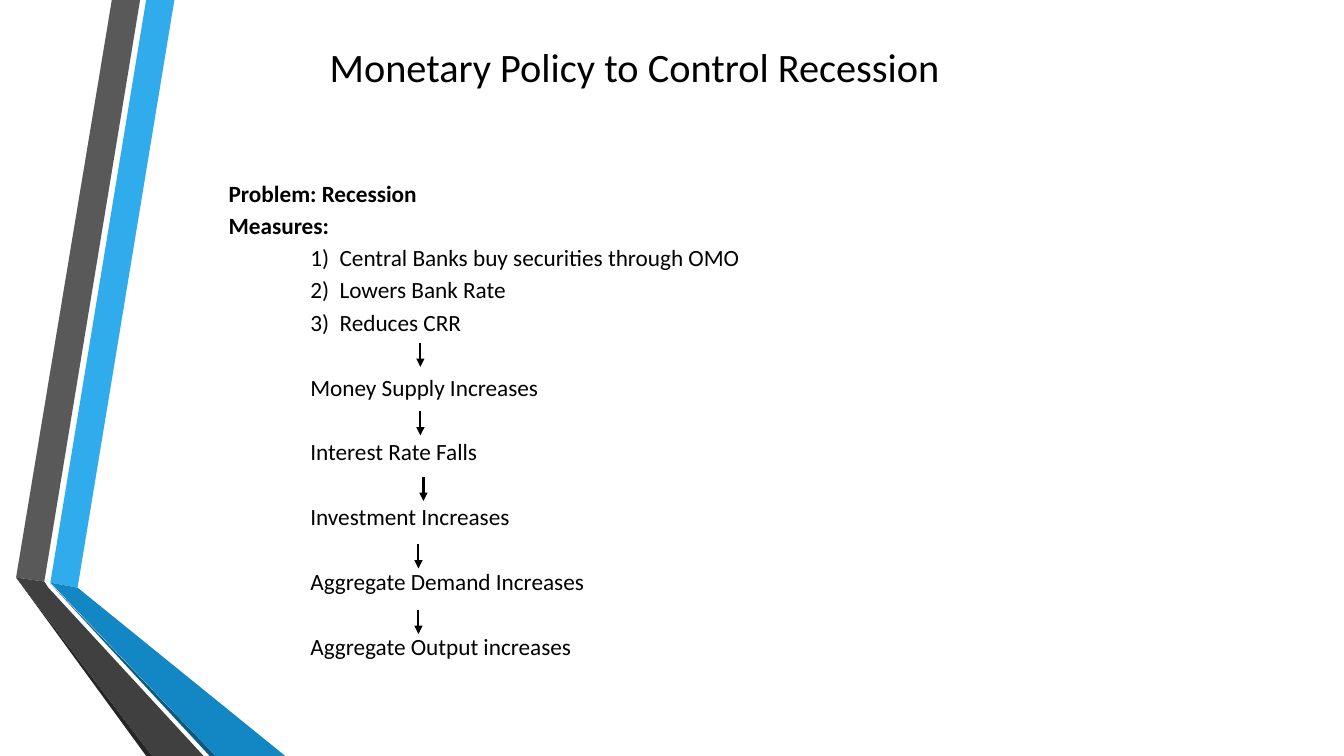
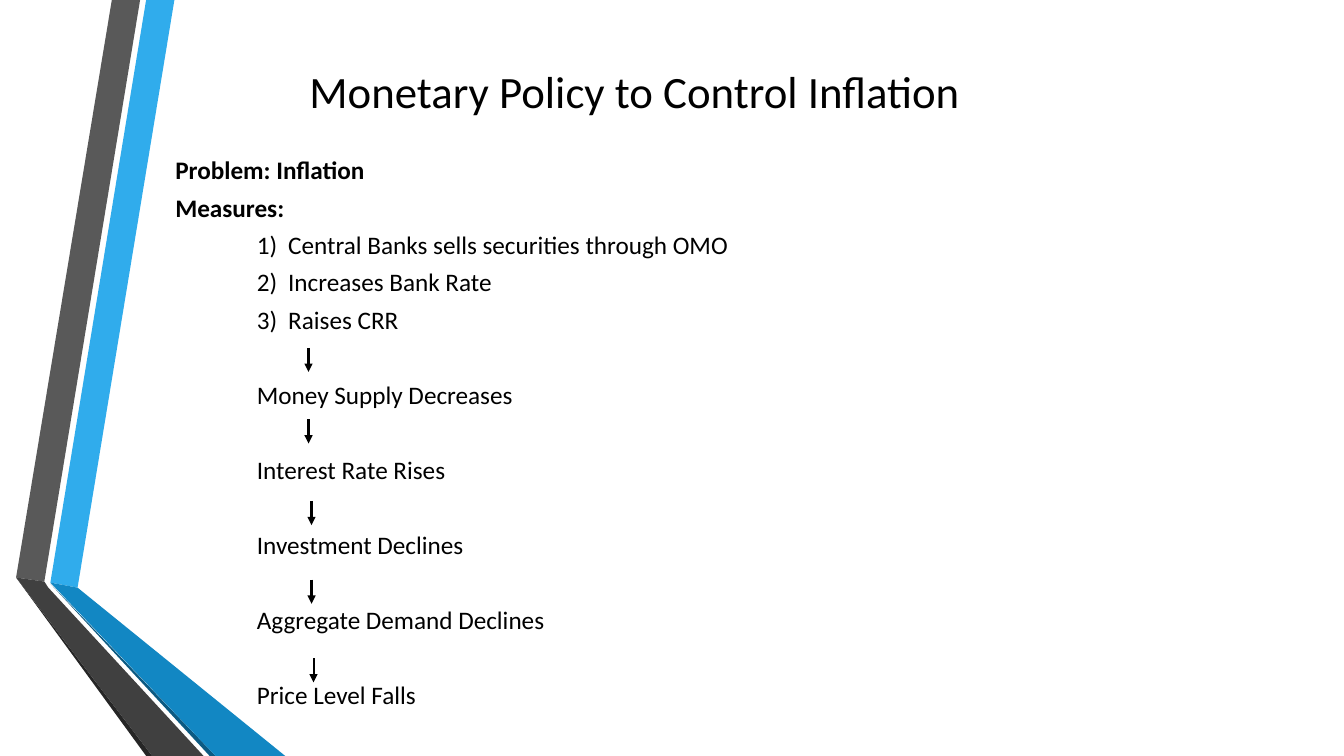
from lxml.etree import SubElement
from pptx import Presentation
from pptx.dml.color import RGBColor
from pptx.enum.shapes import MSO_CONNECTOR as Connector
from pptx.enum.text import MSO_ANCHOR as Anchor, PP_ALIGN as Align
from pptx.oxml.ns import qn
from pptx.util import Pt

PX = 9144  # one hundredth of an inch
FONT = "Calibri"
COLORS = {
    "text": "000000",
    "blue": "30ACEC",
    "blue_fold": "1287C3",
    "blue_edge": "0C5A82",
    "grey": "595959",
    "grey_fold": "404040",
    "grey_edge": "262626",
}
RIBBONS = [
    ("blue", [(50, 578), (77, 583), (173, 0), (145, 0)]),
    ("grey", [(139, 0), (111, 0), (16, 573), (44, 577)]),
    ("grey_edge", [(16, 573), (145, 750), (151, 750)]),
    ("blue_edge", [(50, 579), (208, 750), (214, 750)]),
    ("blue_fold", [(50, 578), (214, 750), (283, 750), (77, 583)]),
    ("grey_fold", [(202, 750), (48, 583), (44, 577), (16, 573), (151, 750)]),
]
INDENT, ARROW_LENGTH, SPACE_AFTER = 81, 24, 6
LINE_HEIGHT = 1.22  # natural line height of the font, in ems

SLIDES = [
    {
        "title": "Monetary Policy to Control Recession",
        "title_box": (217, 40, 825, 52), "title_size": 28.8,
        "headings": ["Problem: Recession", "Measures:"],
        "measures": ["Central Banks buy securities through OMO",
                     "Lowers Bank Rate", "Reduces CRR"],
        "effects": ["Money Supply Increases", "Interest Rate Falls",
                    "Investment Increases", "Aggregate Demand Increases",
                    "Aggregate Output increases"],
        "body_box": (217, 160, 1096, 519), "body_size": 16.6,
        "line_spacing": 0.7, "space_before": 3.1, "hanging": 29,
        "arrows": [(417, 340), (417, 408), (420, 473), (415, 540), (415, 605)],
    },
    {
        "title": "Monetary Policy to Control Inflation",
        "title_box": (217, 40, 825, 100), "title_size": 32,
        "headings": ["Problem: Inflation", "Measures:"],
        "measures": ["Central Banks sells securities through OMO",
                     "Increases Bank Rate", "Raises CRR"],
        "effects": ["Money Supply Decreases", "Interest Rate Rises",
                    "Investment Declines", "Aggregate Demand Declines",
                    "Price Level Falls"],
        "body_box": (164, 134, 1096, 595), "body_size": 18,
        "line_spacing": 0.8, "space_before": 3.4, "hanging": 31,
        "arrows": [(306, 345), (306, 416), (309, 497), (309, 575), (311, 653)],
    },
]


def color(name):
    return RGBColor.from_string(COLORS[name])


def add_ribbons(page):
    for name, points in RIBBONS:
        builder = page.shapes.build_freeform(*points[0], scale=PX)
        builder.add_line_segments(points[1:], close=True)
        ribbon = builder.convert_to_shape()
        ribbon.shadow.inherit = False
        ribbon.fill.solid()
        ribbon.fill.fore_color.rgb = color(name)
        ribbon.line.fill.background()


def add_frame(page, bounds):
    frame = page.shapes.add_textbox(*(n * PX for n in bounds)).text_frame
    frame.word_wrap = True
    frame.vertical_anchor = Anchor.MIDDLE
    return frame


def add_span(para, text, size, bold=False):
    span = para.add_run()
    span.text = text
    span.font.name = FONT
    span.font.size = Pt(size)
    span.font.bold = bold
    span.font.color.rgb = color("text")


def add_title(page, content):
    para = add_frame(page, content["title_box"]).paragraphs[0]
    para.alignment = Align.CENTER
    add_span(para, content["title"], content["title_size"])


def set_indent(para, left, hanging=0):
    properties = para._p.get_or_add_pPr()
    properties.set("marL", str(left * PX))
    properties.set("indent", str(-hanging * PX))
    return properties


def add_body(page, content):
    """Headings, numbered measures, then effects with one free line above each."""
    frame = add_frame(page, content["body_box"])
    size, spacing = content["body_size"], content["line_spacing"]
    before, hanging = content["space_before"], content["hanging"]
    pitch = size * LINE_HEIGHT * spacing + before + SPACE_AFTER
    lines = [(kind, text) for kind in ("headings", "measures", "effects")
             for text in content[kind]]
    for index, (kind, text) in enumerate(lines):
        para = frame.add_paragraph() if index else frame.paragraphs[0]
        para.line_spacing = spacing
        para.space_before = Pt(before + (pitch if kind == "effects" else 0))
        para.space_after = Pt(SPACE_AFTER)
        if kind == "measures":
            properties = set_indent(para, INDENT + hanging, hanging)
            SubElement(properties, qn("a:buAutoNum"), type="arabicParenR")
        elif kind == "effects":
            set_indent(para, INDENT)
        add_span(para, text, size, bold=kind == "headings")


def add_arrow(page, x, top):
    arrow = page.shapes.add_connector(
        Connector.STRAIGHT, x * PX, top * PX, x * PX, (top + ARROW_LENGTH) * PX)
    arrow.line.color.rgb = color("text")
    arrow.line.width = Pt(1.5)
    SubElement(arrow.line._get_or_add_ln(), qn("a:tailEnd"), type="triangle")
    SubElement(arrow._element.spPr, qn("a:effectLst"))


def main():
    deck = Presentation()
    deck.slide_width, deck.slide_height = 1333 * PX, 750 * PX
    for content in SLIDES:
        page = deck.slides.add_slide(deck.slide_layouts[6])
        add_ribbons(page)
        add_title(page, content)
        add_body(page, content)
        for x, top in content["arrows"]:
            add_arrow(page, x, top)
    deck.save("out.pptx")


if __name__ == "__main__":
    main()
